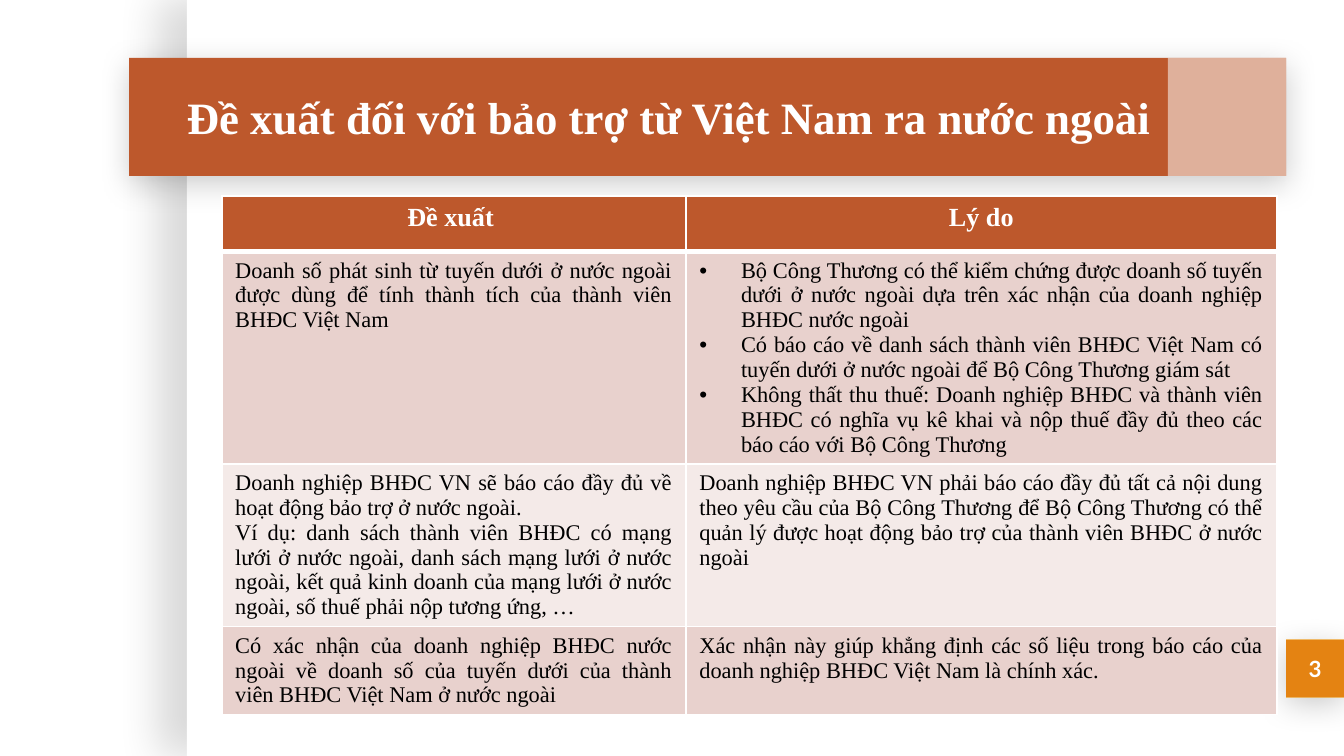
from lxml.etree import SubElement
from pptx import Presentation
from pptx.dml.color import RGBColor
from pptx.enum.shapes import MSO_SHAPE
from pptx.enum.text import MSO_ANCHOR, PP_ALIGN
from pptx.oxml import parse_xml
from pptx.oxml.ns import nsdecls, qn
from pptx.util import Inches, Pt

WIDTH = 10
HEIGHT = WIDTH * 9 / 16
COLORS = {
    "white": "FFFFFF", "black": "000000", "rust": "BD582C", "gold": "FFB000",
    "orange": "E48312", "odd": "E8D1CD", "even": "F4EAE8",
}
SERIF, SANS = "Times New Roman", "Lato"
BULLET_INDENT = Inches(0.31)

HEADINGS = ["Đề xuất ", "Lý do"]
# Each row pairs the paragraphs of a proposal with those of its reason
PROPOSALS = [
    (["Doanh số phát sinh từ tuyến dưới ở nước ngoài được dùng để tính thành tích của thành viên BHĐC Việt Nam"],
     ["Bộ Công Thương có thể kiểm chứng được doanh số tuyến dưới ở nước ngoài dựa trên xác nhận của doanh nghiệp BHĐC nước ngoài",
      "Có báo cáo về danh sách thành viên BHĐC Việt Nam có tuyến dưới ở nước ngoài để Bộ Công Thương giám sát",
      "Không thất thu thuế: Doanh nghiệp BHĐC và thành viên BHĐC có nghĩa vụ kê khai và nộp thuế đầy đủ theo các báo cáo với Bộ Công Thương"]),
    (["Doanh nghiệp BHĐC VN sẽ báo cáo đầy đủ về hoạt động bảo trợ ở nước ngoài.",
      "Ví dụ: danh sách thành viên BHĐC có mạng lưới ở nước ngoài, danh sách mạng lưới ở nước ngoài, kết quả kinh doanh của mạng lưới ở nước ngoài, số thuế phải nộp tương ứng, …"],
     ["Doanh nghiệp BHĐC VN phải báo cáo đầy đủ tất cả nội dung theo yêu cầu của Bộ Công Thương để Bộ Công Thương có thể quản lý được hoạt động bảo trợ của thành viên BHĐC ở nước ngoài"]),
    (["Có xác nhận của doanh nghiệp BHĐC nước ngoài về doanh số của tuyến dưới của thành viên BHĐC Việt Nam ở nước ngoài"],
     ["Xác nhận này giúp khẳng định các số liệu trong báo cáo của doanh nghiệp BHĐC Việt Nam là chính xác."]),
]


def color(name):
    return RGBColor.from_string(COLORS[name])


def style(font, face, size, name, bold=False):
    font.name, font.size, font.bold = face, Pt(size), bold
    font.color.rgb = color(name)


def add_panel(slide, box, fill, shadow=None, alpha=None):
    """Plain rectangle; shadow is (opacity %, blur pt, distance pt, degrees)."""
    panel = slide.shapes.add_shape(MSO_SHAPE.RECTANGLE, *map(Inches, box))
    panel.shadow.inherit = False
    panel.fill.solid()
    panel.fill.fore_color.rgb = color(fill)
    panel.line.fill.background()
    properties = panel.element.spPr
    if alpha:
        tint = properties.find(qn("a:solidFill"))[0]
        SubElement(tint, qn("a:alpha"), val=str(alpha * 1000))
    if shadow:
        opacity, blur, distance, angle = shadow
        properties.find(qn("a:effectLst")).append(parse_xml(
            f'<a:outerShdw {nsdecls("a")} blurRad="{Pt(blur)}" dist="{Pt(distance)}" '
            f'dir="{angle * 60000}" algn="ctr" rotWithShape="0">'
            f'<a:srgbClr val="{COLORS["black"]}"><a:alpha val="{opacity * 1000}"/>'
            '</a:srgbClr></a:outerShdw>'))
    return panel


def add_title_band(slide, box, text):
    left, top, width, height = box
    add_panel(slide, box, "rust", shadow=(20, 16.9, 3.8, 90))
    # Pale square closing the band on the right
    add_panel(slide, (left + width - height, top, height, height), "white", alpha=53)

    title = slide.shapes.title
    title.element.getparent().append(title.element)  # above the band
    title.left, title.top = Inches(left + 0.33), Inches(top)
    title.width, title.height = Inches(7.55), Inches(height)
    frame = title.text_frame
    frame.text = text
    frame.word_wrap = True
    frame.vertical_anchor = MSO_ANCHOR.MIDDLE
    frame.margin_left = frame.margin_right = Inches(0.1)
    frame.margin_top = frame.margin_bottom = Inches(0.1)
    heading = frame.paragraphs[0]
    heading.alignment = PP_ALIGN.LEFT
    heading.line_spacing = 1.0
    style(heading.runs[0].font, SERIF, 24, "white", bold=True)


def add_page_number(slide, box, number):
    add_panel(slide, box, "gold", shadow=(20, 16.9, 3.8, 90))
    frame = add_panel(slide, box, "orange").text_frame
    frame.text = number
    frame.vertical_anchor = MSO_ANCHOR.MIDDLE
    frame.paragraphs[0].alignment = PP_ALIGN.CENTER
    style(frame.paragraphs[0].runs[0].font, SANS, 12, "white", bold=True)


def add_bullet(paragraph):
    properties = paragraph._p.get_or_add_pPr()
    properties.set("marL", str(BULLET_INDENT))
    properties.set("indent", str(-BULLET_INDENT))
    SubElement(properties, qn("a:buFont"), typeface="Arial")
    SubElement(properties, qn("a:buChar"), char="•")


def fill_cell(cell, paragraphs, row, bulleted=False):
    header = row == 0
    # Thick rule under the header, thin white rules elsewhere
    rules = {"L": 1, "R": 1, "T": 3 if row == 1 else 1, "B": 3 if header else 1}
    properties = cell._tc.get_or_add_tcPr()
    for side, weight in rules.items():
        properties.append(parse_xml(
            f'<a:ln{side} {nsdecls("a")} w="{Pt(weight)}"><a:solidFill>'
            f'<a:srgbClr val="{COLORS["white"]}"/></a:solidFill></a:ln{side}>'))
    cell.fill.solid()
    cell.fill.fore_color.rgb = color("rust" if header else "odd" if row % 2 else "even")

    cell.text_frame.text = "\n".join(paragraphs)
    for paragraph in cell.text_frame.paragraphs:
        paragraph.alignment = PP_ALIGN.CENTER if header else PP_ALIGN.JUSTIFY
        if bulleted:
            add_bullet(paragraph)
        for run in paragraph.runs:
            style(run.font, SERIF, 14 if header else 12,
                  "white" if header else "black", bold=header)


def add_proposal_table(slide, box, column_shares, row_shares):
    rows = [[[heading] for heading in HEADINGS], *PROPOSALS]
    holder = slide.shapes.add_table(len(rows), len(HEADINGS), *map(Inches, box))
    table = holder.table
    for column, share in zip(table.columns, column_shares):
        column.width = Inches(box[2] * share)
    # Least heights: rows grow with their text
    for row, share in zip(table.rows, row_shares):
        row.height = Inches(box[3] * share)
    holder.height = Inches(box[3])
    for r, entries in enumerate(rows):
        for c, paragraphs in enumerate(entries):
            fill_cell(table.cell(r, c), paragraphs, r, bulleted=len(paragraphs) > 2)


def main():
    deck = Presentation()
    deck.slide_width, deck.slide_height = Inches(WIDTH), Inches(HEIGHT)
    slide = deck.slides.add_slide(deck.slide_layouts[5])
    slide.background.fill.solid()
    slide.background.fill.fore_color.rgb = color("white")

    # Page sheet with its shadow on the left margin
    margin = 1.39
    add_panel(slide, (margin, 0, WIDTH - margin, HEIGHT), "white", shadow=(15, 22.5, 15, 180))

    # Page number sits in the strip right of the title band
    strip = 0.43
    add_page_number(slide, (WIDTH - strip, 4.76, strip, strip), "3")
    add_title_band(slide, (0.96, strip, WIDTH - strip - 0.96, 0.88),
                   "Đề xuất đối với bảo trợ từ Việt Nam ra nước ngoài")
    add_proposal_table(slide, (1.65, 1.46, 7.85, 4.11),
                       (0.44, 0.56), (0.1, 0.19, 0.1, 0.1))
    deck.save("out.pptx")


if __name__ == "__main__":
    main()
